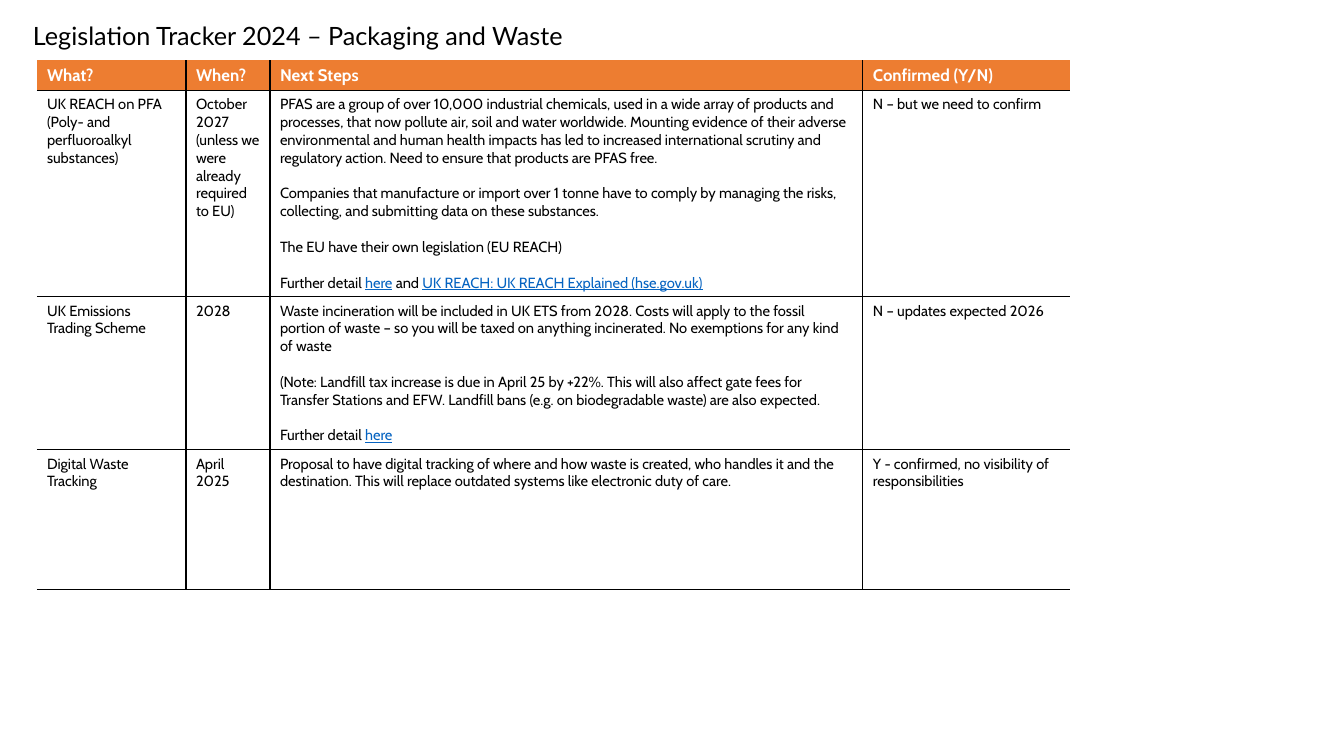
import pptx
import pptx.util
import pptx.dml.color
import pptx.oxml.ns
import lxml.etree

PX = 12192000 / 1344
BLACK = pptx.dml.color.RGBColor(0x00, 0x00, 0x00)
WHITE = pptx.dml.color.RGBColor(0xFF, 0xFF, 0xFF)
ORANGE = pptx.dml.color.RGBColor(0xED, 0x7D, 0x31)
BLUE = pptx.dml.color.RGBColor(0x05, 0x63, 0xC1)

COLS = [149, 84, 593, 207]
ROWS = [30, 206, 153, 140]
LINKS = ["here", "UK REACH: UK REACH Explained (hse.gov.uk)"]
CELLS = [
    [[["What?"]], [["When?"]], [["Next Steps"]], [["Confirmed (Y/N)"]]],
    [
        [["UK REACH on PFA (Poly- and perfluoroalkyl substances)"]],
        [["October 2027 (unless we were already required to EU)"]],
        [
            ["PFAS are a group of over 10,000 industrial chemicals, used in a wide array of "
             "products and processes, that now pollute air, soil and water worldwide. Mounting "
             "evidence of their adverse environmental and human health impacts has led to "
             "increased international scrutiny and regulatory action. Need to ensure that "
             "products are PFAS free."],
            ["Companies that manufacture or import over 1 tonne have to comply by managing the "
             "risks, collecting, and submitting data on these substances."],
            ["The EU have their own legislation (EU REACH)"],
            ["Further detail ", LINKS[0], " and ", LINKS[1]],
        ],
        [["N – but we need to confirm"]],
    ],
    [
        [["UK Emissions Trading Scheme"]],
        [["2028"]],
        [
            ["Waste incineration will be included in UK ETS from 2028. Costs will apply to the "
             "fossil portion of waste – so you will be taxed on anything incinerated. No "
             "exemptions for any kind of waste"],
            ["(Note: Landfill tax increase is due in April 25 by +22%. This will also affect "
             "gate fees for Transfer Stations and EFW. Landfill bans (e.g. on biodegradable "
             "waste) are also expected."],
            ["Further detail ", LINKS[0]],
        ],
        [["N – updates expected 2026"]],
    ],
    [
        [["Digital Waste Tracking"]],
        [["April 2025"]],
        [["Proposal to have digital tracking of where and how waste is created, who handles it "
          "and the destination. This will replace outdated systems like electronic duty of "
          "care."]],
        [["Y - confirmed, no visibility of responsibilities"]],
    ],
]


def px(n):
    return pptx.util.Emu(round(n * PX))


def add_run(para, text, font, size, color, bold=False):
    run = para.add_run()
    run.text = text
    run.font.name = font
    run.font.size = pptx.util.Pt(size)
    run.font.color.rgb = color
    run.font.bold = bold
    return run


deck = pptx.Presentation()
deck.slide_width = px(1344)
deck.slide_height = px(756)
slide = deck.slides.add_slide(deck.slide_layouts[6])

frame = slide.shapes.add_table(len(ROWS), len(COLS), px(37), px(60), px(sum(COLS)), px(sum(ROWS)))
table = frame.table
table.first_row = False
table.horz_banding = False
for col, width in zip(table.columns, COLS):
    col.width = px(width)
for row, height in zip(table.rows, ROWS):
    row.height = px(height)

for r, line in enumerate(CELLS):
    head = r == 0
    for c, paras in enumerate(line):
        cell = table.cell(r, c)
        edges = {"lnL": c > 0, "lnR": c < len(COLS) - 1, "lnT": r > 0, "lnB": True}
        props = cell._tc.get_or_add_tcPr()
        for tag, drawn in edges.items():
            edge = lxml.etree.SubElement(props, pptx.oxml.ns.qn("a:" + tag), w="12700")
            kind = "a:solidFill" if drawn else "a:noFill"
            paint = lxml.etree.SubElement(edge, pptx.oxml.ns.qn(kind))
            if drawn:
                lxml.etree.SubElement(paint, pptx.oxml.ns.qn("a:srgbClr"), val=str(BLACK))
        if head:
            cell.fill.solid()
            cell.fill.fore_color.rgb = ORANGE
        else:
            cell.fill.background()
        for i, parts in enumerate(paras):
            para = cell.text_frame.paragraphs[0] if i == 0 else cell.text_frame.add_paragraph()
            if i:
                para.space_before = pptx.util.Pt(12.75)
            for text in parts:
                link = text in LINKS
                color = WHITE if head else BLUE if link else BLACK
                run = add_run(para, text, "Cabin", 12 if head else 10.5, color, head)
                run.font.underline = link

title = slide.shapes.add_textbox(px(23), px(15), px(575), px(40)).text_frame
title.word_wrap = True
add_run(title.paragraphs[0], "Legislation Tracker 2024 – Packaging and Waste", "Lato", 18, BLACK)

deck.save("out.pptx")
